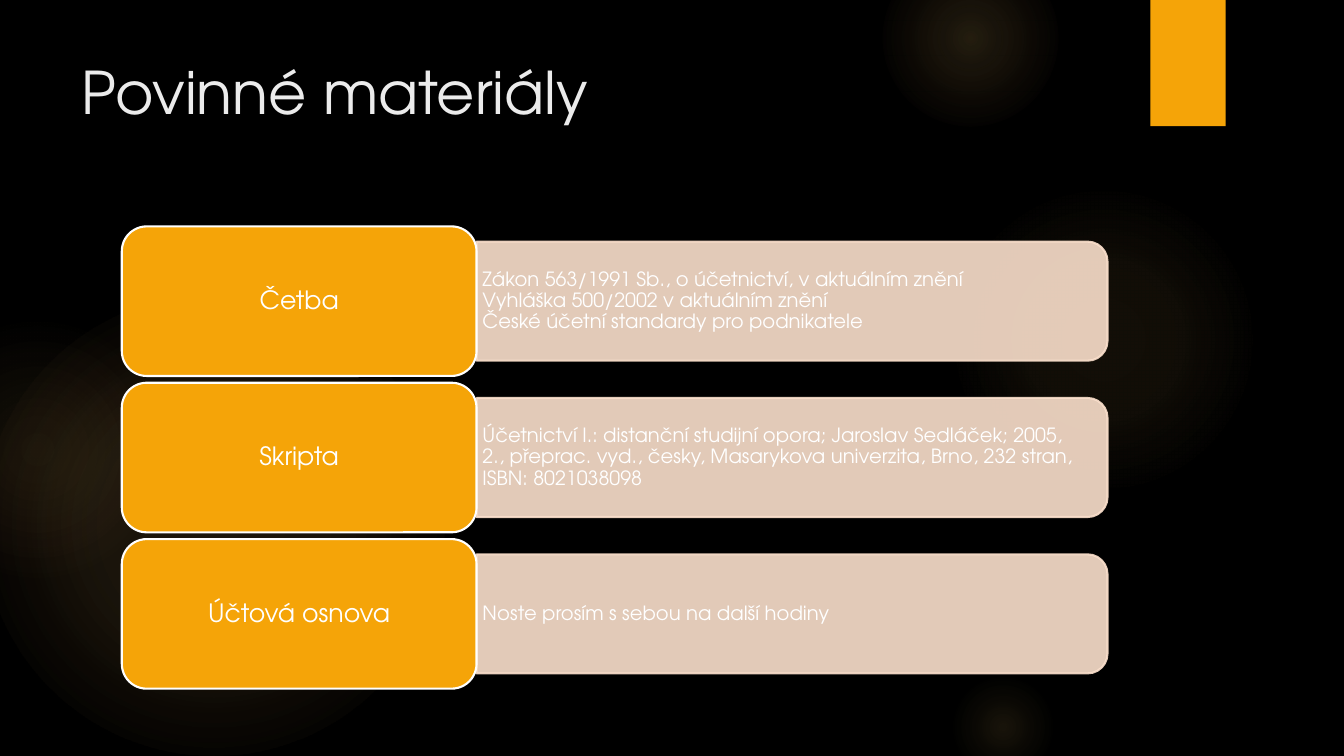
from lxml import etree
from pptx import Presentation
from pptx.dml.color import RGBColor
from pptx.enum.shapes import MSO_SHAPE
from pptx.enum.text import MSO_ANCHOR, PP_ALIGN
from pptx.oxml import parse_xml
from pptx.oxml.ns import nsdecls, qn
from pptx.util import Cm, Pt

# Content
HEADING = "Povinné materiály"
MATERIALS = [
    ("Četba", ["Zákon 563/1991 Sb., o účetnictví, v aktuálním znění",
               "Vyhláška 500/2002 v aktuálním znění",
               "České účetní standardy pro podnikatele"]),
    ("Skripta", ["Účetnictví I.: distanční studijní opora; Jaroslav Sedláček; 2005,",
                 "2., přeprac. vyd., česky, Masarykova univerzita, Brno, 232 stran,",
                 "ISBN: 8021038098"]),
    ("Účtová osnova", ["Noste prosím s sebou na další hodiny"]),
]

# Style
FONT = "TeX Gyre Adventor"
BLACK = RGBColor(0x00, 0x00, 0x00)
WHITE = RGBColor(0xFF, 0xFF, 0xFF)
PALE_GREY = RGBColor(0xEB, 0xEB, 0xEB)
AMBER = RGBColor(0xF5, 0xA4, 0x08)
PEACH = RGBColor(0xFB, 0xE0, 0xCC)
GLOW = RGBColor(0xFA, 0xC9, 0x6A)
EMBER = RGBColor(0xF5, 0x9B, 0x74)

# Glows: left, top, diameter in cm; stops as (position %, colour, opacity %)
GLOWS = [
    (-0.43, 7.42, 11.63, [(0, GLOW, 11), (36, GLOW, 10), (75, GLOW, 0)]),
    (-2.34, 8.05, 6.55, [(0, GLOW, 8), (36, GLOW, 5), (71, EMBER, 0)]),
    (23.9, 4.65, 7.82, [(0, GLOW, 7), (36, GLOW, 6), (69, GLOW, 0)]),
    (22.23, -1.27, 4.45, [(0, GLOW, 14), (36, GLOW, 7), (73, GLOW, 0)]),
    (23.9, 16.94, 2.74, [(0, GLOW, 10), (31, GLOW, 5), (66, GLOW, 0)]),
]

# Row layout in cm
LABEL_LEFT, LABEL_WIDTH, LABEL_HEIGHT = 3.07, 8.94, 3.77
PANEL_WIDTH, PANEL_HEIGHT = 15.9, 3.0
DETAIL_WIDTH, DETAIL_HEIGHT = 15.75, 2.72
FIRST_CENTRE, ROW_PITCH = 7.59, 3.94
PANEL_LEFT = LABEL_LEFT + LABEL_WIDTH


def add_shape(preset, left, top, width, height):
    shape = slide.shapes.add_shape(preset, Cm(left), Cm(top), Cm(width), Cm(height))
    shape.shadow.inherit = False
    return shape


def paint(shape, fill, outline=None):
    shape.fill.solid()
    shape.fill.fore_color.rgb = fill
    if outline is None:
        shape.line.fill.background()
    else:
        shape.line.color.rgb = outline
        shape.line.width = Pt(1.5)


def add_glow(left, top, diameter, stops):
    glow = add_shape(MSO_SHAPE.OVAL, left, top, diameter, diameter)
    glow.fill.background()
    glow.line.fill.background()
    stop_xml = "".join(
        f'<a:gs pos="{position * 1000}"><a:srgbClr val="{color}">'
        f'<a:alpha val="{opacity * 1000}"/></a:srgbClr></a:gs>'
        for position, color, opacity in stops)
    gradient = parse_xml(
        f'<a:gradFill {nsdecls("a")} rotWithShape="1"><a:gsLst>{stop_xml}</a:gsLst>'
        '<a:path path="circle"><a:fillToRect l="50000" t="50000" r="50000" b="50000"/>'
        '</a:path></a:gradFill>')
    properties = glow.element.spPr
    properties.replace(properties.find(qn("a:noFill")), gradient)


def write(shape, lines, size, color, align, anchor):
    frame = shape.text_frame
    frame.word_wrap = True
    frame.vertical_anchor = anchor
    frame.text = "\n".join(lines)
    for paragraph in frame.paragraphs:
        paragraph.alignment = align
        paragraph.line_spacing = 0.9
        for run in paragraph.runs:
            run.font.name = FONT
            run.font.size = Pt(size)
            run.font.color.rgb = color


def add_panel(centre):
    # A tall shape turned by 90 degrees, so its rounded end points right
    panel = add_shape(MSO_SHAPE.ROUND_2_SAME_RECTANGLE,
                      PANEL_LEFT + (PANEL_WIDTH - PANEL_HEIGHT) / 2,
                      centre - PANEL_WIDTH / 2, PANEL_HEIGHT, PANEL_WIDTH)
    panel.rotation = 90
    paint(panel, PEACH, PEACH)
    for color in panel.element.spPr.iter(qn("a:srgbClr")):
        etree.SubElement(color, qn("a:alpha")).set("val", "90000")


def add_details(lines, centre):
    details = slide.shapes.add_textbox(
        Cm(PANEL_LEFT), Cm(centre - DETAIL_HEIGHT / 2), Cm(DETAIL_WIDTH), Cm(DETAIL_HEIGHT))
    frame = details.text_frame
    frame.margin_left = frame.margin_right = Cm(0.15)
    frame.margin_top = frame.margin_bottom = Cm(0.08)
    write(details, lines, 14, WHITE, PP_ALIGN.LEFT, MSO_ANCHOR.MIDDLE)


def add_label(name, centre):
    label = add_shape(MSO_SHAPE.ROUNDED_RECTANGLE, LABEL_LEFT, centre - LABEL_HEIGHT / 2,
                      LABEL_WIDTH, LABEL_HEIGHT)
    paint(label, AMBER, WHITE)
    write(label, [name], 18, WHITE, PP_ALIGN.CENTER, MSO_ANCHOR.MIDDLE)


prs = Presentation()
prs.slide_width, prs.slide_height = Cm(33.87), Cm(19.05)
slide = prs.slides.add_slide(prs.slide_layouts[5])

# Background and decoration
slide.background.fill.solid()
slide.background.fill.fore_color.rgb = BLACK
for glow_values in GLOWS:
    add_glow(*glow_values)
paint(add_shape(MSO_SHAPE.RECTANGLE, 28.99, 0, 1.9, 3.18), AMBER)

# Title
title = slide.shapes.title
title.left, title.top, title.width, title.height = Cm(1.8), Cm(1.27), Cm(26.14), Cm(3.89)
write(title, [HEADING], 42, PALE_GREY, PP_ALIGN.LEFT, MSO_ANCHOR.TOP)
title.text_frame.paragraphs[0].line_spacing = 1.0

# Rows of materials
for row, (name, lines) in enumerate(MATERIALS):
    centre = FIRST_CENTRE + row * ROW_PITCH
    add_panel(centre)
    add_details(lines, centre)
    add_label(name, centre)

prs.save("out.pptx")
